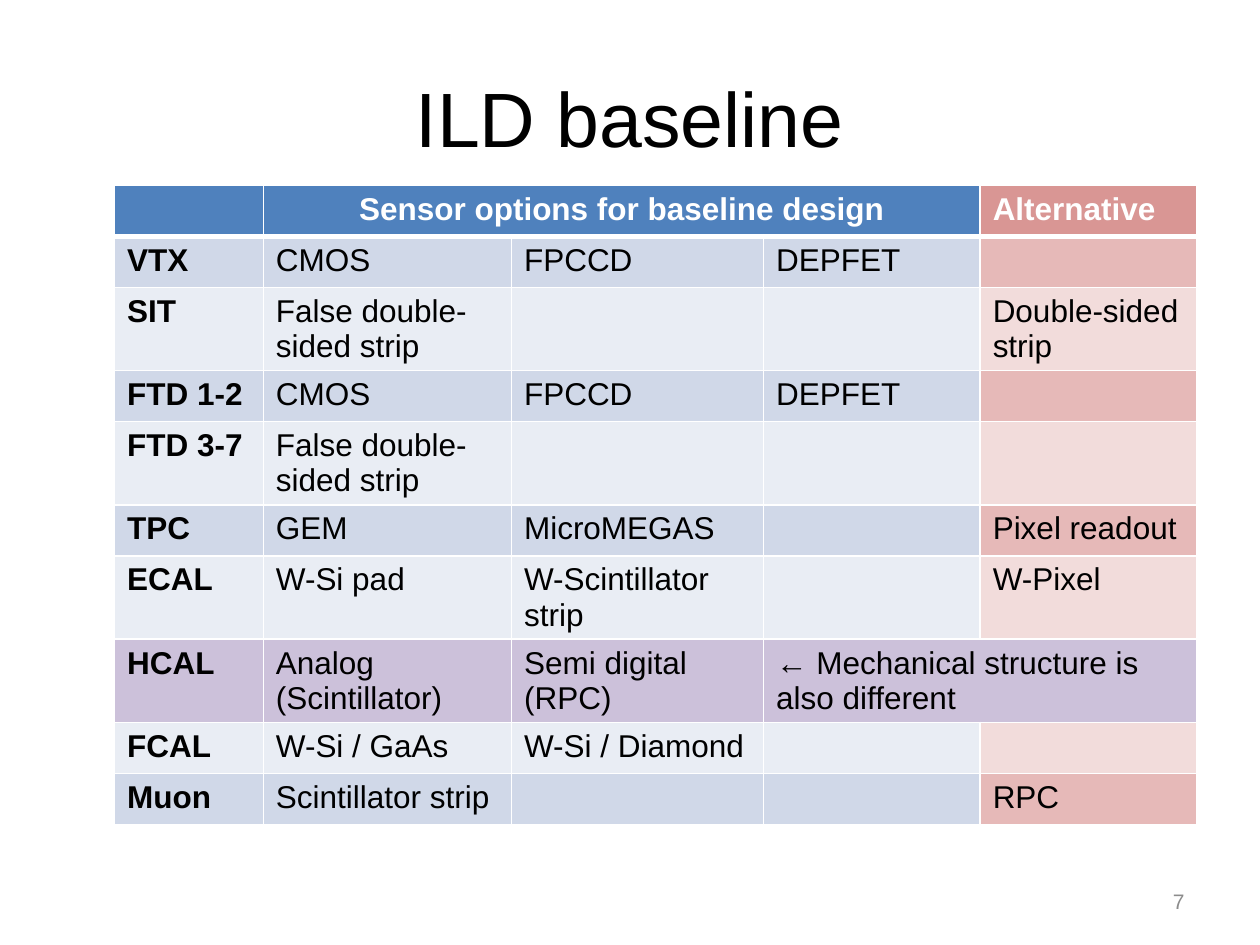
from dataclasses import dataclass

from lxml import etree
from pptx import Presentation
from pptx.dml.color import RGBColor
from pptx.enum.text import MSO_ANCHOR, PP_ALIGN
from pptx.oxml.ns import qn
from pptx.util import Inches, Pt

LEFT, CENTER, RIGHT = PP_ALIGN.LEFT, PP_ALIGN.CENTER, PP_ALIGN.RIGHT
MIDDLE = MSO_ANCHOR.MIDDLE


@dataclass(frozen=True)
class Theme:
    font: str = "Arial"
    head: str = "4F81BD"
    alt_head: str = "D99694"
    bands: tuple = ("D0D8E8", "E9EDF4")
    alt_bands: tuple = ("E6B9B8", "F2DCDB")
    accent: str = "CCC1DA"
    ink: str = "000000"
    paper: str = "FFFFFF"
    muted: str = "8C8C8C"
    title: int = 44
    body: int = 18
    small: int = 12
    thin: int = 1
    thick: int = 3


THEME = Theme()

COLS = [1.18, 1.97, 2, 1.72, 1.72]
LOW, TALL = 0.38, 0.66
TALL_ROWS = {"SIT", "FTD 3-7", "ECAL", "HCAL"}
MARKED = "HCAL"
ROWS = [
    ["", "Sensor options for baseline design", "", "", "Alternative"],
    ["VTX", "CMOS", "FPCCD", "DEPFET", ""],
    ["SIT", "False double-sided strip", "", "", "Double-sided strip"],
    ["FTD 1-2", "CMOS", "FPCCD", "DEPFET", ""],
    ["FTD 3-7", "False double-sided strip", "", "", ""],
    ["TPC", "GEM", "MicroMEGAS", "", "Pixel readout"],
    ["ECAL", "W-Si pad", "W-Scintillator strip", "", "W-Pixel"],
    ["HCAL", "Analog (Scintillator)", "Semi digital (RPC)",
     "← Mechanical structure is also different", ""],
    ["FCAL", "W-Si / GaAs", "W-Si / Diamond", "", ""],
    ["Muon", "Scintillator strip", "", "", "RPC"],
]


def write(frame, text, size, color, align=LEFT, bold=False):
    frame.text = text
    para = frame.paragraphs[0]
    para.alignment = align
    for run in para.runs:
        font = run.font
        font.name, font.size, font.bold = THEME.font, Pt(size), bold
        font.color.rgb = RGBColor.from_string(color)


def place(shape, box):
    shape.left, shape.top, shape.width, shape.height = map(Inches, box)


def edge(cell, widths):
    """Draw cell borders; the lines must come before the fill."""
    props = cell._tc.get_or_add_tcPr()
    for i, (side, width) in enumerate(zip("LRTB", widths)):
        line = etree.Element(qn(f"a:ln{side}"), w=str(Pt(width)))
        fill = etree.SubElement(line, qn("a:solidFill"))
        etree.SubElement(fill, qn("a:srgbClr"), val=THEME.paper)
        props.insert(i, line)


def shade(row, col):
    last = col == len(COLS) - 1
    if row == 0:
        return THEME.alt_head if last else THEME.head
    if ROWS[row][0] == MARKED:
        return THEME.accent
    bands = THEME.alt_bands if last else THEME.bands
    return bands[(row - 1) % 2]


def add_title(slide, box):
    title = slide.shapes.title
    place(title, box)
    title.text_frame.vertical_anchor = MIDDLE
    write(title.text_frame, "ILD baseline", THEME.title, THEME.ink, CENTER)


def add_grid(slide, left, top):
    highs = [TALL if row[0] in TALL_ROWS else LOW for row in ROWS]
    box = map(Inches, (left, top, sum(COLS), sum(highs)))
    table = slide.shapes.add_table(len(ROWS), len(COLS), *box).table
    for col, width in zip(table.columns, COLS):
        col.width = Inches(width)
    for row, high in zip(table.rows, highs):
        row.height = Inches(high)

    # Cell text, fills and borders
    for r, row in enumerate(ROWS):
        for c, text in enumerate(row):
            cell = table.cell(r, c)
            head = r == 0
            write(cell.text_frame, text, THEME.body,
                  THEME.paper if head else THEME.ink,
                  CENTER if head and c == 1 else LEFT, head or c == 0)
            cell.fill.solid()
            cell.fill.fore_color.rgb = RGBColor.from_string(shade(r, c))
            above = THEME.thick if r == 1 else THEME.thin
            below = THEME.thick if head else THEME.thin
            edge(cell, (THEME.thin, THEME.thin, above, below))

    # Spanning cells
    table.cell(0, 1).merge(table.cell(0, 3))
    mark = [row[0] for row in ROWS].index(MARKED)
    table.cell(mark, 3).merge(table.cell(mark, 4))


def add_number(slide, box):
    frame = slide.shapes.add_textbox(*map(Inches, box)).text_frame
    frame.word_wrap = True
    frame.vertical_anchor = MIDDLE
    write(frame, "7", THEME.small, THEME.muted, RIGHT)


def main():
    deck = Presentation()
    deck.slide_width, deck.slide_height = Inches(10), Inches(7.5)
    slide = deck.slides.add_slide(deck.slide_layouts[5])
    add_title(slide, (0.5, 0.3, 9, 1.25))
    add_grid(slide, 0.91, 1.47)
    add_number(slide, (7.17, 6.95, 2.33, 0.4))
    deck.save("out.pptx")


if __name__ == "__main__":
    main()
